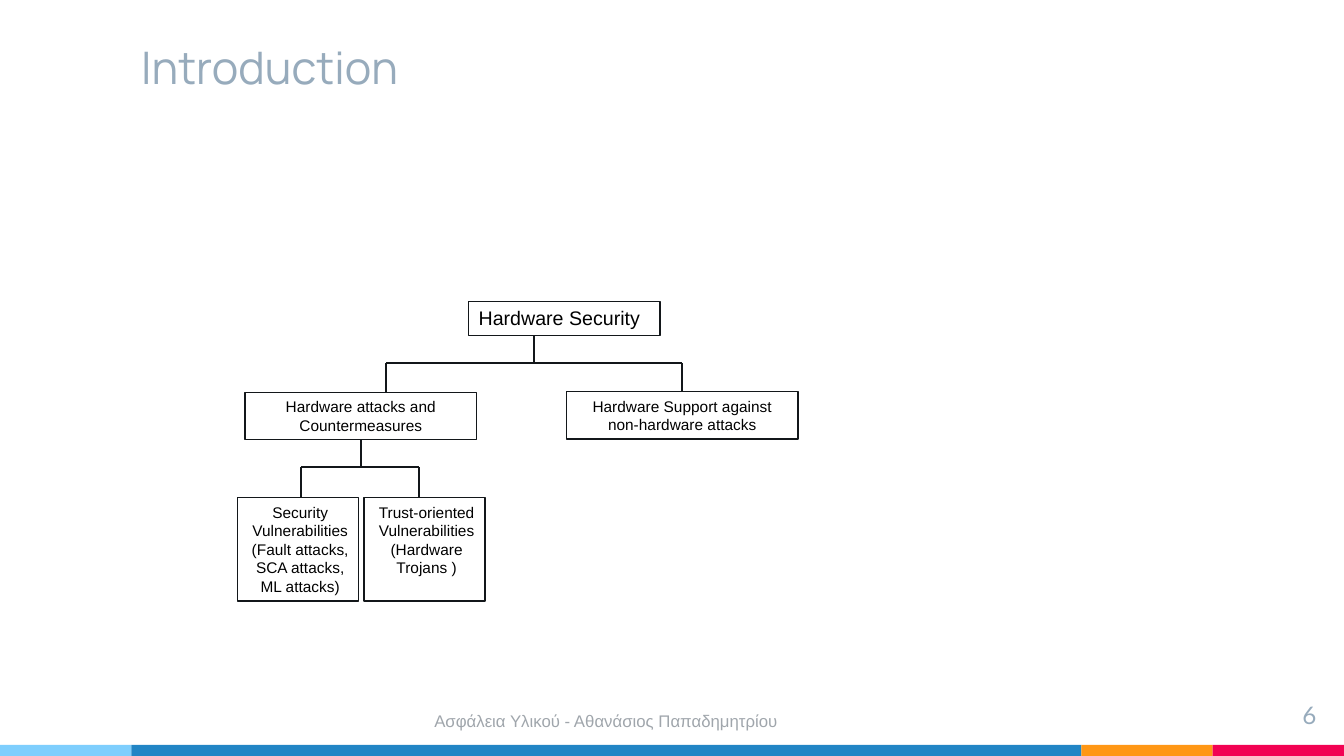
from lxml import etree
from pptx import Presentation
from pptx.dml.color import RGBColor
from pptx.enum.shapes import MSO_CONNECTOR, MSO_SHAPE
from pptx.enum.text import MSO_ANCHOR, PP_ALIGN
from pptx.oxml.ns import qn
from pptx.util import Pt

RECT, LINE = MSO_SHAPE.RECTANGLE, MSO_CONNECTOR.STRAIGHT
LEFT, MID, RIGHT = PP_ALIGN.LEFT, PP_ALIGN.CENTER, PP_ALIGN.RIGHT
TOP, CENTRE, BASE = MSO_ANCHOR.TOP, MSO_ANCHOR.MIDDLE, MSO_ANCHOR.BOTTOM

INK = {"sky": "7ECEFD", "blue": "2185C5", "orange": "FF9715",
       "red": "F20253", "title": "97ABBC", "foot": "A0A6AC",
       "line": "13171A", "text": "000000", "back": "FFFFFF"}

# Content: lengths in points
WIDE, HIGH = 960, 540
BAND = [("sky", 93.8), ("blue", 678.6), ("orange", 93.8), ("red", 93.8)]
BAND_H = 8

# text, place, font, size, colour, alignment, anchor, top and bottom inset
LABELS = [
    ("Introduction", (93.8, 37.4, 678.2, 36.7),
     "Manrope", 32, "title", LEFT, BASE, 7.2),
    ("6", (812.9, 493.2, 134.6, 33.1),
     "Lato", 17.3, "title", RIGHT, TOP, 7.2),
    ("Ασφάλεια Υλικού - Αθανάσιος Παπαδημητρίου",
     (93.8, 500.4, 678.2, 28.8), "Arial", 12, "foot", MID, CENTRE, 3.6),
]

# name: text, place, size, alignment
NODES = {
    "root": ("Hardware Security", (334.8, 215.3, 136.8, 24.2), 14, LEFT),
    "attack": ("Hardware attacks and Countermeasures",
               (175, 280.2, 165.6, 33.9), 11, MID),
    "support": ("Hardware Support against non-hardware attacks",
                (404.6, 279.8, 165.6, 33.9), 11, MID),
}
# text, left edge of the frame
LEAVES = [
    ("Security Vulnerabilities\n(Fault attacks, SCA attacks, ML attacks)",
     169.7),
    ("Trust-oriented Vulnerabilities\n(Hardware Trojans )", 260),
]
LEAF_Y, LEAF_W, LEAF_H = 355.2, 86.4, 74.2

# stem x, top, bar y, ((drop x, bottom), ...), node above, nodes below
FORKS = [
    (381.4, 239.6, 259.2, ((275.8, 280.2), (487.4, 279.8)),
     None, (None, "support")),
    (257.8, 314.1, 333.8, ((215, 355.2), (299.5, 355.7)),
     "attack", (None, None)),
]

deck = Presentation()
deck.slide_width, deck.slide_height = Pt(WIDE), Pt(HIGH)
slide = deck.slides.add_slide(deck.slide_layouts[6])
slide.background.fill.solid()
slide.background.fill.fore_color.rgb = RGBColor.from_string(INK["back"])
shapes = slide.shapes


def write(shape, text, font, size, ink, align, anchor=TOP, inset=3.6):
    frame = shape.text_frame
    frame.text = text
    frame.word_wrap = True
    frame.vertical_anchor = anchor
    frame.margin_left = frame.margin_right = Pt(7.2)
    frame.margin_top = frame.margin_bottom = Pt(inset)
    for para in frame.paragraphs:
        para.alignment = align
        for run in para.runs:
            run.font.name, run.font.size = font, Pt(size)
            run.font.color.rgb = RGBColor.from_string(INK[ink])


def label(place, *style):
    write(shapes.add_textbox(*map(Pt, place)), *style)


def box(place, fill=None):
    shape = shapes.add_shape(RECT, *map(Pt, place))
    shape.shadow.inherit = False
    if fill:
        shape.fill.solid()
        shape.fill.fore_color.rgb = RGBColor.from_string(INK[fill])
        shape.line.fill.background()
    else:
        shape.fill.background()
        shape.line.color.rgb = RGBColor.from_string(INK["line"])
        shape.line.width = Pt(1)
    return shape


def link(x1, y1, x2, y2, above=None, below=None):
    line = shapes.add_connector(LINE, Pt(x1), Pt(y1), Pt(x2), Pt(y2))
    line.line.color.rgb = RGBColor.from_string(INK["line"])
    line.line.width = Pt(1.25)
    etree.SubElement(line._element.spPr, qn("a:effectLst"))
    if above:
        line.begin_connect(above, 2)
    if below:
        line.end_connect(below, 0)


# Colour band along the foot
x = 0
for ink, width in BAND:
    box((x, HIGH - BAND_H, width, BAND_H), ink)
    x += width

# Title, page number and footer
for text, place, *style in LABELS:
    label(place, text, *style)

# Upper boxes of the tree
made = {}
for name, (text, place, size, align) in NODES.items():
    made[name] = box(place)
    write(made[name], text, "Arial", size, "text", align)

# Leaves: a frame with its text laid slightly inside
for text, x in LEAVES:
    box((x, LEAF_Y, LEAF_W, LEAF_H))
    label((x + 1.2, LEAF_Y + 0.5, LEAF_W + 0.7, LEAF_H),
          text, "Arial", 11, "text", MID)

# Branches
for stem, top, bar, drops, above, below in FORKS:
    link(stem, top, stem, bar, above=made.get(above))
    for (x, end), name in zip(drops, below):
        link(stem, bar, x, bar)
        link(x, bar, x, end, below=made.get(name))

deck.save("out.pptx")
